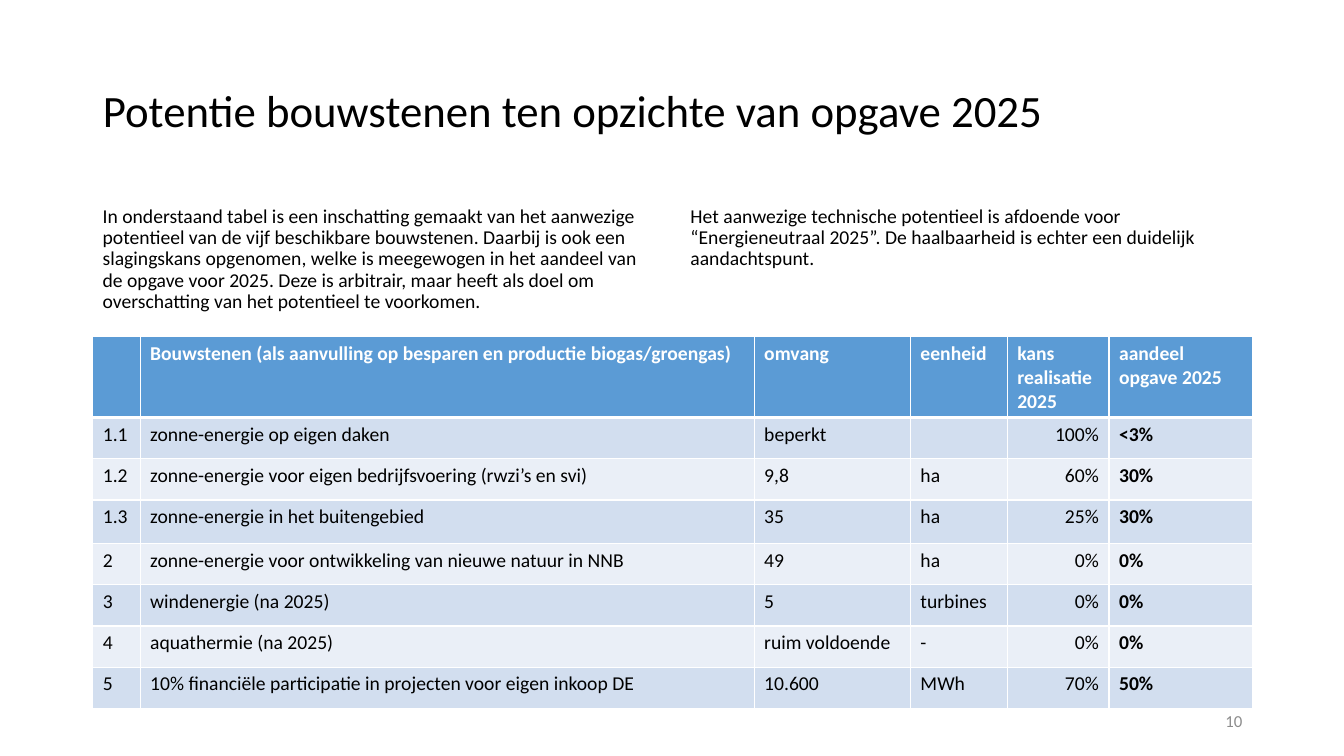
import pptx
import pptx.dml.color
import pptx.enum.text
import pptx.oxml
import pptx.oxml.ns
import pptx.util
from pptx.util import Inches

COLORS = {
    "text": "000000",
    "white": "FFFFFF",
    "header": "5B9BD5",
    "band_dark": "D2DEEF",
    "band_light": "EAEFF7",
    "page_number": "8C8C8C",
}
FONT = "Calibri"
ALIGN = pptx.enum.text.PP_ALIGN
ANCHOR = pptx.enum.text.MSO_ANCHOR

TITLE = "Potentie bouwstenen ten opzichte van opgave 2025"
INTRO = (
    "In onderstaand tabel is een inschatting gemaakt van het aanwezige potentieel "
    "van de vijf beschikbare bouwstenen. Daarbij is ook een slagingskans opgenomen, "
    "welke is meegewogen in het aandeel van de opgave voor 2025. Deze is arbitrair, "
    "maar heeft als doel om overschatting van het potentieel te voorkomen."
)
CONCLUSION = (
    "Het aanwezige technische potentieel is afdoende voor “Energieneutraal 2025”. "
    "De haalbaarheid is echter een duidelijk aandachtspunt."
)
COLUMN_WIDTHS = [0.47, 6.09, 1.55, 0.96, 1.01, 1.42]
HEADER_HEIGHT, ROW_HEIGHT = 0.8, 0.41
CHANCE_COLUMN, SHARE_COLUMN = 4, 5
ROWS = [
    ["", "Bouwstenen (als aanvulling op besparen en productie biogas/groengas)",
     "omvang", "eenheid", "kans realisatie 2025", "aandeel opgave 2025"],
    ["1.1", "zonne-energie op eigen daken", "beperkt", "", "100%", "<3%"],
    ["1.2", "zonne-energie voor eigen bedrijfsvoering (rwzi’s en svi)",
     "9,8", "ha", "60%", "30%"],
    ["1.3", "zonne-energie in het buitengebied", "35", "ha", "25%", "30%"],
    ["2", "zonne-energie voor ontwikkeling van nieuwe natuur in NNB",
     "49", "ha", "0%", "0%"],
    ["3", "windenergie (na 2025)", "5", "turbines", "0%", "0%"],
    ["4", "aquathermie (na 2025)", "ruim voldoende", "-", "0%", "0%"],
    ["5", "10% financiële participatie in projecten voor eigen inkoop DE",
     "10.600", "MWh", "70%", "50%"],
]


def rgb(name):
    return pptx.dml.color.RGBColor.from_string(COLORS[name])


def write(text_frame, text, size, color="text", bold=False, align=ALIGN.LEFT):
    paragraph = text_frame.paragraphs[0]
    paragraph.alignment = align
    run = paragraph.add_run()
    run.text = text
    run.font.name = FONT
    run.font.size = pptx.util.Pt(size)
    run.font.bold = bold
    run.font.color.rgb = rgb(color)
    return paragraph


def add_title(slide):
    title = slide.shapes.title
    title.left, title.top = Inches(0.92), Inches(0.4)
    title.width, title.height = Inches(11.5), Inches(1.45)
    title.text_frame.vertical_anchor = ANCHOR.MIDDLE
    write(title.text_frame, TITLE, 32).line_spacing = 0.9


def add_text(slide, box, text, size, **style):
    shape = slide.shapes.add_textbox(*map(Inches, box))
    shape.text_frame.word_wrap = True
    return shape, write(shape.text_frame, text, size, **style)


def add_body(slide, left, text):
    paragraph = add_text(slide, (left, 2, 5.67, 4.76), text, 14)[1]
    paragraph.line_spacing = 0.9
    paragraph.space_before = pptx.util.Pt(10)


def set_borders(cell, top, bottom):
    properties = cell._tc.get_or_add_tcPr()
    for side, points in (("L", 1), ("R", 1), ("T", top), ("B", bottom)):
        properties.append(pptx.oxml.parse_xml(
            f'<a:ln{side} {pptx.oxml.ns.nsdecls("a")} w="{pptx.util.Pt(points)}">'
            f'<a:solidFill><a:srgbClr val="{COLORS["white"]}"/></a:solidFill>'
            f'</a:ln{side}>'))


def fill_cell(cell, row, column, text):
    header = row == 0
    set_borders(cell, top=3 if row == 1 else 1, bottom=3 if header else 1)
    cell.fill.solid()
    band = "band_dark" if row % 2 else "band_light"
    cell.fill.fore_color.rgb = rgb("header" if header else band)
    if text:
        right = column == CHANCE_COLUMN and not header
        write(cell.text_frame, text, 14, "white" if header else "text",
              bold=header or column == SHARE_COLUMN,
              align=ALIGN.RIGHT if right else ALIGN.LEFT)


def add_potential_table(slide):
    height = HEADER_HEIGHT + ROW_HEIGHT * (len(ROWS) - 1)
    table = slide.shapes.add_table(
        len(ROWS), len(COLUMN_WIDTHS), Inches(0.92), Inches(3.34),
        Inches(sum(COLUMN_WIDTHS)), Inches(height)).table
    for column, width in zip(table.columns, COLUMN_WIDTHS):
        column.width = Inches(width)
    for row, texts in enumerate(ROWS):
        table.rows[row].height = Inches(ROW_HEIGHT if row else HEADER_HEIGHT)
        for column, text in enumerate(texts):
            fill_cell(table.cell(row, column), row, column, text)
    # The row for 1.3 is slightly taller
    table.rows[3].height = Inches(0.43)


def main():
    presentation = pptx.Presentation()
    presentation.slide_width = Inches(13.33)
    presentation.slide_height = Inches(7.5)
    slide = presentation.slides.add_slide(presentation.slide_layouts[5])

    # Title and the two text columns
    add_title(slide)
    add_body(slide, 0.92, INTRO)
    add_body(slide, 6.75, CONCLUSION)

    # Page number
    page_number, _ = add_text(slide, (9.42, 6.95, 3, 0.4), "10", 12,
                              color="page_number", align=ALIGN.RIGHT)
    page_number.text_frame.vertical_anchor = ANCHOR.MIDDLE

    # Table of building blocks
    add_potential_table(slide)

    presentation.save("out.pptx")


if __name__ == "__main__":
    main()
